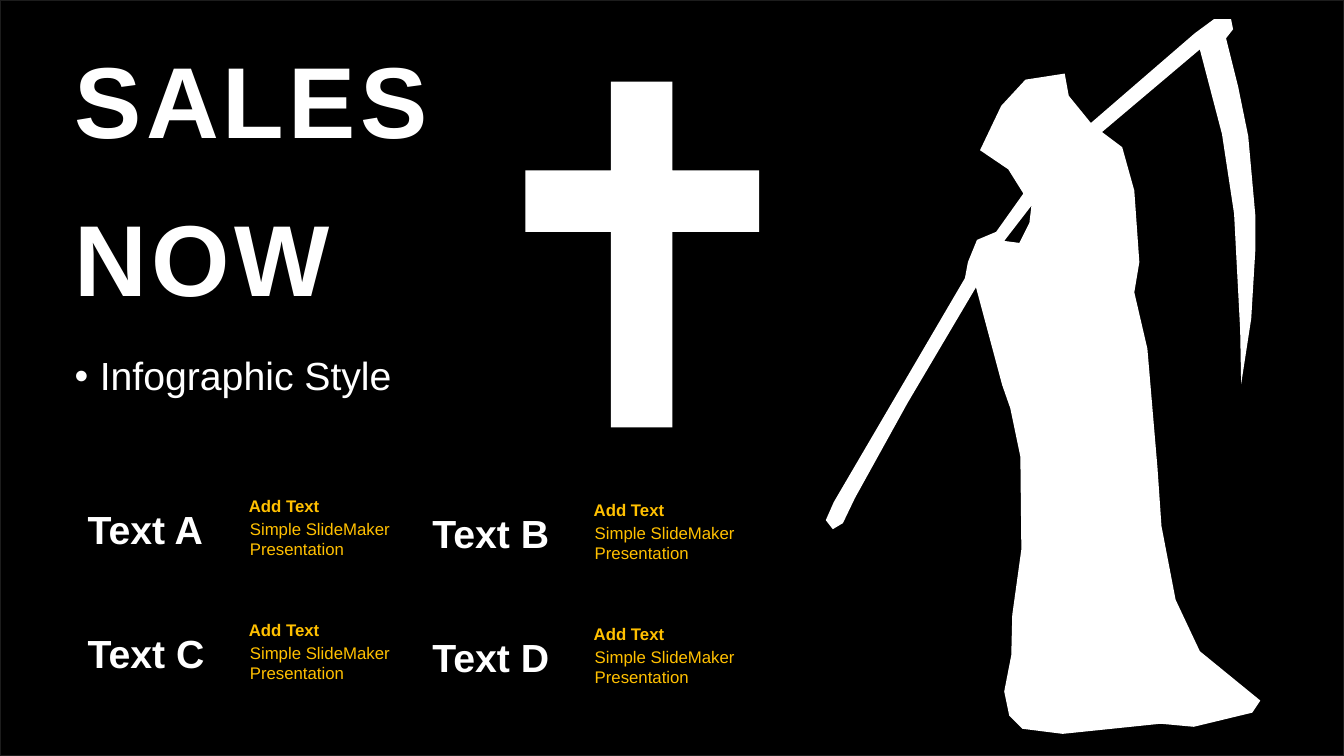
from lxml import etree
from pptx import Presentation
from pptx import util as u
from pptx.dml.color import RGBColor
from pptx.enum import shapes, text
from pptx.oxml.ns import qn

WIDTH, HEIGHT = 13.33, 7.5
BLACK, WHITE, GOLD, EDGE = "000000", "FFFFFF", "FFC000", "1C1C1C"
TITLE = ["SALES", "NOW"]
SUBTITLE = ["Infographic Style"]
ITEMS = [["Text A", "Text B"], ["Text C", "Text D"]]
HEADING, DETAIL = "Add Text", "Simple SlideMaker Presentation"

GRID_LEFT, GRID_TOP = 0.77, 4.87
COLUMN, ROW, COLUMN_DROP = 3.42, 1.23, 0.04
LABEL_FORMAT = {"size": u.Pt(28), "bold": True}
HEADING_FORMAT = {"size": u.Pt(12), "bold": True}
DETAIL_FORMAT = {"size": u.Pt(12), "bold": False}
TITLE_FORMAT = {"size": u.Pt(72), "bold": True}
SUBTITLE_FORMAT = {"size": u.Pt(28), "bold": False}

CROSS_COLUMNS, CROSS_ROWS = (521, 606, 667, 753), (81, 169, 230, 424)
CROSS_WALK = zip("122332211001", "001122332211")
REAPER = [
    (968, 285), (900, 400), (848, 494), (836, 519), (826, 525), (819, 516), (827, 498),
    (957, 276), (960, 260), (969, 238), (988, 230), (1015, 192), (1000, 168), (972, 149),
    (993, 105), (1017, 79), (1056, 73), (1060, 95), (1082, 122), (1185, 33), (1204, 19),
    (1221, 19), (1223, 29), (1216, 38), (1228, 86), (1238, 135), (1245, 213), (1245, 249),
    (1241, 316), (1231, 381), (1230, 327), (1224, 212), (1212, 133), (1190, 49),
    (1093, 131), (1113, 146), (1125, 189), (1130, 260), (1125, 290), (1138, 346),
    (1148, 464), (1152, 522), (1166, 595), (1190, 646), (1250, 695), (1242, 707),
    (1184, 721), (1151, 718), (1054, 728), (1014, 723), (1001, 710), (996, 686),
    (1003, 650), (1004, 610), (1013, 545), (1012, 453), (1002, 405), (994, 382)]
ARM_GAP = [(1023, 204), (996, 239), (1011, 241), (1021, 221)]


def color(value):
    return RGBColor.from_string(value)


def apply(target, values):
    for name, value in values.items():
        setattr(target, name, value)


def place(shape, left, top, width, height):
    apply(shape, {"left": u.Inches(left), "top": u.Inches(top),
                  "width": u.Inches(width), "height": u.Inches(height)})


def write(shape, lines, font, font_color, anchor=text.MSO_ANCHOR.TOP, **spacing):
    frame = shape.text_frame
    frame.text = "\n".join(lines)
    apply(frame, {"word_wrap": True, "auto_size": text.MSO_AUTO_SIZE.NONE,
                  "vertical_anchor": anchor})
    for paragraph in frame.paragraphs:
        apply(paragraph, {"alignment": text.PP_ALIGN.LEFT, **spacing})
        for run in paragraph.runs:
            apply(run.font, {"name": "Arial", **font})
            run.font.color.rgb = color(font_color)


def add_text(slide, box, line, font, font_color):
    write(slide.shapes.add_textbox(*map(u.Inches, box)), [line], font, font_color)


def add_outline(slide, *contours):
    """Draw closed contours, given in hundredths of an inch, as one white shape."""
    builder = slide.shapes.build_freeform(*contours[0][0], scale=u.Inches(0.01))
    for contour in contours:
        builder.move_to(*contour[0])
        builder.add_line_segments(contour[1:], close=True)
    shape = builder.convert_to_shape()
    shape.shadow.inherit = False
    shape.fill.solid()
    shape.fill.fore_color.rgb = color(WHITE)
    shape.line.fill.background()


def add_backdrop(slide):
    backdrop = slide.shapes.add_shape(shapes.MSO_SHAPE.RECTANGLE, 0, 0,
                                      u.Inches(WIDTH), u.Inches(HEIGHT))
    backdrop.shadow.inherit = False
    backdrop.fill.solid()
    backdrop.fill.fore_color.rgb = color(BLACK)
    backdrop.line.color.rgb = color(EDGE)
    backdrop.line.width = u.Pt(1)
    slide.shapes._spTree.insert(2, backdrop._element)


def add_headings(slide):
    title, subtitle = slide.placeholders
    place(title, 0.64, 0.61, 7.83, 2.18)
    write(title, TITLE, TITLE_FORMAT, WHITE, text.MSO_ANCHOR.MIDDLE,
          line_spacing=1.1, space_before=u.Pt(18))
    for properties in title._element.iter(qn("a:rPr")):
        properties.set("spc", "300")
    place(subtitle, 0.64, 3.49, 4.54, 0.79)
    write(subtitle, SUBTITLE, SUBTITLE_FORMAT, WHITE, line_spacing=0.9, space_before=u.Pt(10))
    properties = subtitle.text_frame.paragraphs[0]._p.get_or_add_pPr()
    properties.set("marL", str(u.Inches(0.25)))
    properties.set("indent", str(u.Inches(-0.25)))
    etree.SubElement(properties, qn("a:buChar")).set("char", "•")


def add_items(slide):
    for row, labels in enumerate(ITEMS):
        for column, label in enumerate(labels):
            left = GRID_LEFT + column * COLUMN
            top = GRID_TOP + row * ROW + column * COLUMN_DROP
            add_text(slide, (left, top + 0.09, 1.43, 0.57), label, LABEL_FORMAT, WHITE)
            add_text(slide, (left + 1.6, top, 1.74, 0.3), HEADING, HEADING_FORMAT, GOLD)
            add_text(slide, (left + 1.61, top + 0.23, 1.74, 0.5), DETAIL, DETAIL_FORMAT, GOLD)


def main():
    presentation = Presentation()
    presentation.slide_width = u.Inches(WIDTH)
    presentation.slide_height = u.Inches(HEIGHT)
    slide = presentation.slides.add_slide(presentation.slide_layouts[1])
    add_backdrop(slide)
    add_headings(slide)
    add_items(slide)
    add_outline(slide, REAPER, ARM_GAP)
    add_outline(slide, [(CROSS_COLUMNS[int(column)], CROSS_ROWS[int(row)])
                        for column, row in CROSS_WALK])
    presentation.save("out.pptx")


if __name__ == "__main__":
    main()
